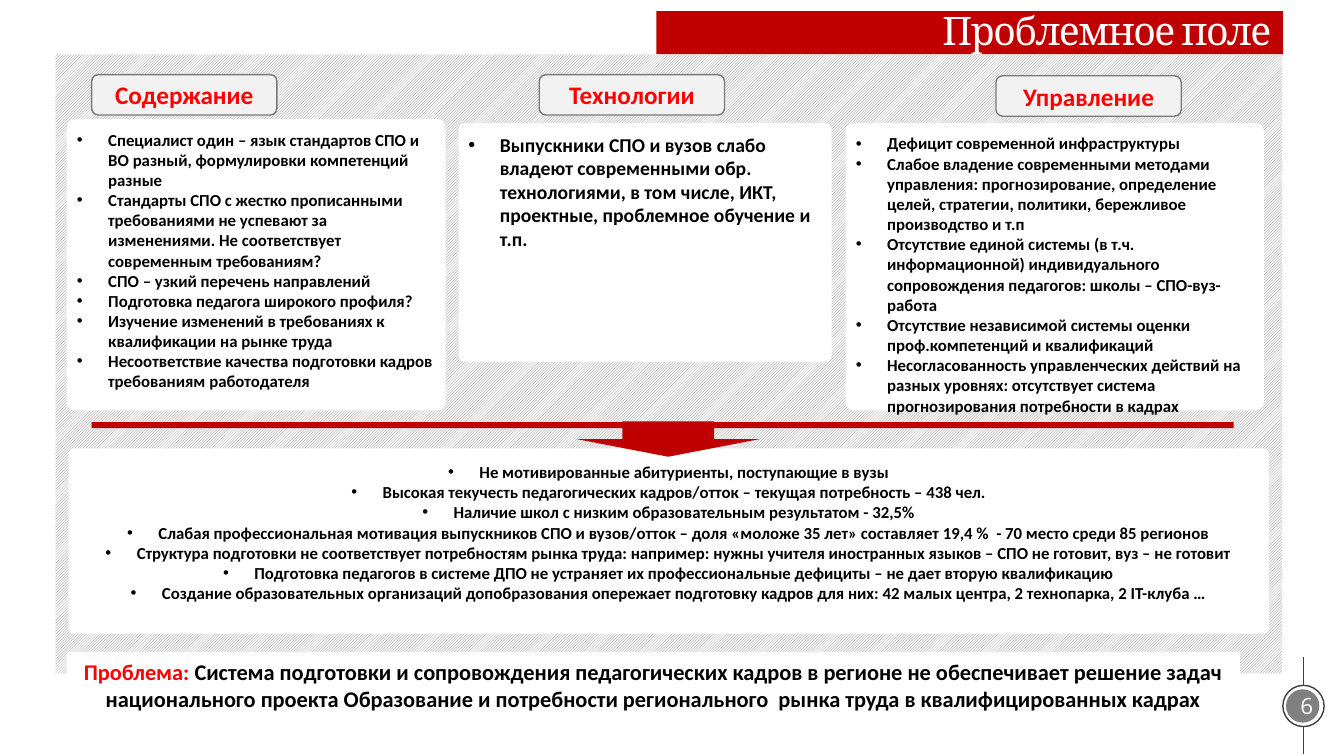
from pptx import Presentation
from pptx.dml.color import RGBColor
from pptx.enum.dml import MSO_PATTERN
from pptx.enum.shapes import MSO_CONNECTOR as Link, MSO_SHAPE as Kind
from pptx.enum.text import MSO_ANCHOR as Anchor, PP_ALIGN as Align
from pptx.oxml.ns import qn
from pptx.util import Cm, Pt
from lxml.etree import SubElement

RED, DARK_RED, WHITE, BLACK = "FF0000", "C00000", "FFFFFF", "000000"
PALE, GREY, DARK_GREY = "F2F2F2", "808080", "404040"
CORNER = 0.027
HEADER_SIZE = (4.67, 1.02)
TEXT_INSETS = (0.2, 0.2, 0.2, 0.2)

COLUMNS = [
    ("Содержание", (2.31, 1.88), (1.68, 3, 9.55, 7.34), 12, [
        "Специалист один – язык стандартов СПО и ВО разный, формулировки компетенций разные",
        "Стандарты СПО с жестко прописанными требованиями не успевают за изменениями. "
        "Не соответствует современным требованиям?",
        "СПО – узкий перечень направлений",
        "Подготовка педагога широкого профиля?",
        "Изучение изменений в требованиях к квалификации на рынке труда",
        "Несоответствие качества подготовки кадров требованиям работодателя",
    ]),
    ("Технологии", (13.59, 1.88), (11.56, 3.1, 9.4, 6.02), 14, [
        "Выпускники СПО и вузов слабо владеют современными обр. технологиями, "
        "в том числе, ИКТ, проектные, проблемное обучение и т.п.",
    ]),
    ("Управление", (25.1, 1.91), (21.31, 3.1, 10.54, 7.24), 12, [
        "Дефицит современной инфраструктуры",
        "Слабое владение современными методами управления: прогнозирование, "
        "определение целей, стратегии, политики, бережливое производство и т.п",
        "Отсутствие единой системы (в т.ч. информационной) индивидуального "
        "сопровождения педагогов: школы – СПО-вуз-работа",
        "Отсутствие независимой системы оценки  проф.компетенций и квалификаций",
        "Несогласованность управленческих действий на разных уровнях: "
        "отсутствует система прогнозирования потребности в кадрах",
    ]),
]

CONSEQUENCES = [
    "Не мотивированные абитуриенты, поступающие в вузы",
    "Высокая текучесть педагогических кадров/отток – текущая потребность – 438 чел.",
    "Наличие школ с низким образовательным результатом - 32,5%",
    "Слабая профессиональная мотивация выпускников СПО и вузов/отток – доля "
    "«моложе 35 лет» составляет 19,4 %  - 70 место среди 85 регионов",
    "Структура подготовки не соответствует потребностям рынка труда: например: "
    "нужны учителя иностранных языков – СПО не готовит, вуз – не готовит",
    "Подготовка педагогов в системе ДПО не устраняет их профессиональные дефициты "
    "– не дает вторую квалификацию",
    "Создание образовательных организаций допобразования опережает подготовку "
    "кадров для них: 42 малых центра, 2 технопарка, 2 IT-клуба …",
]

PROBLEM = (" Система подготовки и сопровождения педагогических кадров в регионе не "
           "обеспечивает решение задач национального проекта Образование и потребности "
           "регионального  рынка труда в квалифицированных кадрах")


def color(code):
    """Return the colour for a hex string."""
    return RGBColor.from_string(code)


def apply(target, values):
    """Set every attribute named in the dict of values."""
    for name, value in values.items():
        setattr(target, name, value)


def add_box(page, kind, place, fill=None, line=None, corner=None):
    """Add a flat preset shape at a place given in centimetres."""
    box = page.shapes.add_shape(kind, *map(Cm, place))
    box.shadow.inherit = False
    if fill:
        box.fill.solid()
        box.fill.fore_color.rgb = color(fill)
    else:
        box.fill.background()
    if line:
        box.line.color.rgb = color(line)
        box.line.width = Pt(1)
    else:
        box.line.fill.background()
    if corner:
        box.adjustments[0] = corner
    return box


def set_frame(box, anchor=Anchor.MIDDLE, insets=(0, 0, 0, 0), wrap=True):
    """Set the anchor, the wrapping and the insets of a text frame."""
    sides = ("margin_left", "margin_top", "margin_right", "margin_bottom")
    values = {"word_wrap": wrap, "vertical_anchor": anchor}
    values.update(zip(sides, map(Cm, insets)))
    apply(box.text_frame, values)
    return box.text_frame


def add_span(para, text, size, code, font="Calibri", bold=True):
    """Add a formatted run to a paragraph."""
    span = para.add_run()
    span.text = text
    apply(span.font, {"size": Pt(size), "name": font, "bold": bold})
    span.font.color.rgb = color(code)
    return span


def add_label(box, text, size, code, align=Align.CENTER, insets=(0, 0, 0, 0),
              wrap=True, **style):
    """Write one line of text in a box."""
    para = set_frame(box, insets=insets, wrap=wrap).paragraphs[0]
    para.alignment = align
    return para, add_span(para, text, size, code, **style)


def add_bullets(box, items, size, align=Align.LEFT, insets=TEXT_INSETS):
    """Write a bulleted list in a box."""
    frame = set_frame(box, Anchor.TOP, insets)
    for index, item in enumerate(items):
        para = frame.add_paragraph() if index else frame.paragraphs[0]
        para.alignment = align
        props = para._p.get_or_add_pPr()
        props.set("marL", str(Cm(0.79)))
        props.set("indent", str(-Cm(0.79)))
        SubElement(props, qn("a:buFont"), typeface="Arial")
        SubElement(props, qn("a:buChar"), char="•")
        add_span(para, item, size, BLACK)


def add_title(page):
    """Add the red title band."""
    band = add_box(page, Kind.RECTANGLE, (16.54, 0.28, 15.8, 1.09), DARK_RED)
    para, span = add_label(band, "Проблемное поле", 28, WHITE, Align.RIGHT,
                           (0, 0, 0.3, 0), font="Cambria", bold=False)
    para.line_spacing = 0.9
    span.font._element.set("spc", "-100")


def add_page_number(page):
    """Add the ringed page number with its two ticks."""
    disc = add_box(page, Kind.OVAL, (32.41, 17.37, 0.84, 0.84), GREY)
    add_label(disc, "6", 16, WHITE, insets=(0.2, 0, 0, 0), wrap=False,
              font="Open Sans", bold=False)
    add_box(page, Kind.OVAL, (32.33, 17.27, 1.04, 1.04), line=DARK_GREY)
    for top, bottom in ((16.56, 17.27), (18.31, 19)):
        tick = page.shapes.add_connector(
            Link.STRAIGHT, Cm(32.85), Cm(top), Cm(32.85), Cm(bottom))
        tick.line.color.rgb = color(DARK_GREY)
        tick.line.width = Pt(1)
        SubElement(tick._element.spPr, qn("a:effectLst"))


def add_panel(page):
    """Add the hatched background panel."""
    panel = add_box(page, Kind.RECTANGLE, (1.4, 1.37, 30.91, 15.6))
    panel.fill.patterned()
    panel.fill.pattern = MSO_PATTERN.LIGHT_UPWARD_DIAGONAL
    panel.fill.fore_color.rgb = color("A6A6A6")
    panel.fill.back_color.rgb = color(PALE)


def add_card(page, place):
    """Add a white card with slightly rounded corners."""
    return add_box(page, Kind.ROUNDED_RECTANGLE, place, WHITE, corner=CORNER)


def add_column(page, name, corner, place, size, items):
    """Add a header button and the card below it."""
    add_bullets(add_card(page, place), items, size)
    header = add_box(page, Kind.ROUNDED_RECTANGLE, corner + HEADER_SIZE, PALE, "797979")
    add_label(header, name, 18, RED)


def main():
    """Build the slide and save the deck."""
    deck = Presentation()
    apply(deck, {"slide_width": Cm(33.87), "slide_height": Cm(19.05)})
    page = deck.slides.add_slide(deck.slide_layouts[6])
    add_title(page)
    add_page_number(page)
    add_panel(page)
    add_box(page, Kind.RECTANGLE, (2.31, 10.64, 28.78, 0.15), DARK_RED)
    for column in COLUMNS:
        add_column(page, *column)
    add_bullets(add_card(page, (1.73, 11.3, 30.25, 4.67)), CONSEQUENCES, 12,
                Align.CENTER, (0.2, 0.3, 0.2, 0.2))
    problem = add_card(page, (1.68, 16.43, 29.57, 1.68))
    para, _ = add_label(problem, "Проблема:", 16, RED)
    add_span(para, PROBLEM, 16, BLACK)
    add_box(page, Kind.DOWN_ARROW, (14.53, 10.62, 4.62, 0.89), DARK_RED)
    deck.save("out.pptx")


if __name__ == "__main__":
    main()
